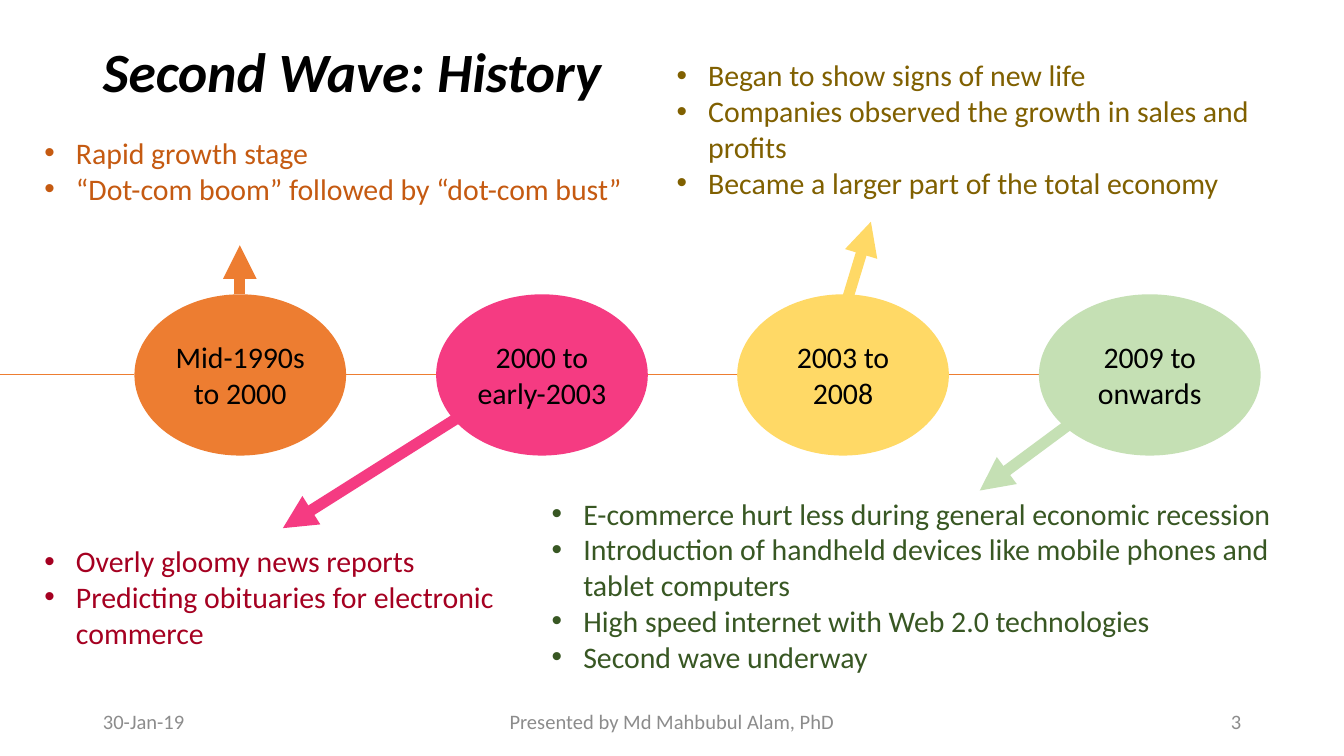
from collections import namedtuple
from dataclasses import dataclass

from pptx import Presentation
from pptx.dml.color import RGBColor
from pptx.enum.shapes import MSO_CONNECTOR as CXN, MSO_SHAPE as SHAPE
from pptx.enum.text import MSO_ANCHOR as ANCHOR, PP_ALIGN as ALIGN
from pptx.oxml.ns import qn
from pptx.util import Pt
from lxml.etree import SubElement

PX = 4572
Box = namedtuple("Box", "x y w h")
Stage = namedtuple("Stage", "label fill width arrow")
Note = namedtuple("Note", "box color items")


@dataclass(frozen=True)
class Theme:
    """Colours, type sizes and line widths of the slide."""
    font: str = "Calibri"
    ink: str = "000000"
    muted: str = "8C8C8C"
    orange: str = "ED7D31"
    pink: str = "F53B82"
    yellow: str = "FFD966"
    green: str = "C5E0B4"
    rust: str = "C55A11"
    crimson: str = "A50021"
    olive: str = "806000"
    forest: str = "385723"
    title: float = 29.7
    body: int = 16
    small: int = 11
    rail: float = 0.5
    arrow: int = 6


T = Theme()

STAGES = [
    Stage("Mid-1990s to 2000", T.orange, 315, (357, 0, 357, -73)),
    Stage("2000 to early-2003", T.pink, 315, (695, 175, 421, 348)),
    Stage("2003 to 2008", T.yellow, 315, (1256, 24, 1296, -108)),
    Stage("2009 to onwards", T.green, 330, (1616, 175, 1458, 292)),
]

NOTES = [
    Note(Box(51, 192, 950, 164), T.rust, [
        "Rapid growth stage",
        "“Dot-com boom” followed by “dot-com bust”"]),
    Note(Box(51, 800, 756, 176), T.crimson, [
        "Overly gloomy news reports",
        "Predicting obituaries for electronic commerce"]),
    Note(Box(992, 77, 932, 230), T.olive, [
        "Began to show signs of new life",
        "Companies observed the growth in sales and profits",
        "Became a larger part of the total economy"]),
    Note(Box(806, 729, 1156, 284), T.forest, [
        "E-commerce hurt less during general economic recession",
        "Introduction of handheld devices like mobile phones and tablet computers",
        "High speed internet with Web 2.0 technologies",
        "Second wave underway"]),
]


def emu(*lengths):
    """Turn px lengths into EMU."""
    return [n * PX for n in lengths]


def set_frame(sp, anchor):
    """Give a shape's text frame its insets, wrapping and anchor."""
    tf = sp.text_frame
    tf.word_wrap = True
    tf.vertical_anchor = anchor
    tf.margin_left, tf.margin_top, tf.margin_right, tf.margin_bottom = emu(15, 8, 15, 8)
    return tf


def add_run(p, text, size, color, strong=False):
    """Add one styled run to a paragraph."""
    r = p.add_run()
    r.text = text
    r.font.name, r.font.size = T.font, Pt(size)
    r.font.color.rgb = RGBColor.from_string(color)
    if strong:
        r.font.bold = r.font.italic = True


def add_label(s, box, text, size, color, align=ALIGN.LEFT, strong=False):
    """Add a one-paragraph text box, centred vertically."""
    tf = set_frame(s.shapes.add_textbox(*emu(*box)), ANCHOR.MIDDLE)
    p = tf.paragraphs[0]
    p.alignment = align
    add_run(p, text, size, color, strong)
    return p


def add_line(s, ends, color, width, arrow=False):
    """Add a straight line, with an optional arrowhead at its end."""
    cx = s.shapes.add_connector(CXN.STRAIGHT, *emu(*ends))
    cx.line.color.rgb = RGBColor.from_string(color)
    cx.line.width = Pt(width)
    if arrow:
        SubElement(cx.line._get_or_add_ln(), qn("a:tailEnd"), type="triangle")
    SubElement(cx._element.spPr, qn("a:effectLst"))


def add_title(s, box):
    """Place the slide title."""
    p = add_label(s, box, "Second Wave: History", T.title, T.ink, strong=True)
    p.line_spacing = 0.9


def add_oval(s, box, stage):
    """Place one stage of the timeline."""
    sp = s.shapes.add_shape(SHAPE.OVAL, *emu(*box))
    sp.shadow.inherit = False
    sp.fill.solid()
    sp.fill.fore_color.rgb = RGBColor.from_string(stage.fill)
    sp.line.fill.background()
    p = set_frame(sp, ANCHOR.MIDDLE).paragraphs[0]
    p.alignment = ALIGN.CENTER
    add_run(p, stage.label, T.body, T.ink)


def add_timeline(s, box):
    """Place the stages, the rail between them and their arrows."""
    first, last = 200, box.w - STAGES[-1].width
    mid, rail_x = box.y + box.h // 2, box.x
    for i, stage in enumerate(STAGES):
        x = box.x + first + round(i * (last - first) / (len(STAGES) - 1))
        add_line(s, (rail_x, mid, x, mid), T.orange, T.rail)
        add_oval(s, Box(x, box.y, stage.width, box.h), stage)
        rail_x = x + stage.width
        x1, y1, x2, y2 = stage.arrow
        ends = (box.x + x1, box.y + y1, box.x + x2, box.y + y2)
        add_line(s, ends, stage.fill, T.arrow, arrow=True)


def add_note(s, box, color, items):
    """Place a bulleted list."""
    tf = set_frame(s.shapes.add_textbox(*emu(*box)), ANCHOR.TOP)
    indent = 47 * PX
    for i, item in enumerate(items):
        p = tf.add_paragraph() if i else tf.paragraphs[0]
        pPr = p._p.get_or_add_pPr()
        pPr.set("marL", str(indent))
        pPr.set("indent", str(-indent))
        SubElement(pPr, qn("a:buFont"), typeface="Arial")
        SubElement(pPr, qn("a:buChar"), char="•")
        add_run(p, item, T.body, color)


def add_footer(s, box):
    """Place the date, presenter and page number."""
    side, centre = 450, 676
    parts = [
        (0, side, "30-Jan-19", ALIGN.LEFT),
        ((box.w - centre) // 2, centre, "Presented by Md Mahbubul Alam, PhD", ALIGN.CENTER),
        (box.w - side, side, "3", ALIGN.RIGHT),
    ]
    for x, w, text, align in parts:
        add_label(s, Box(box.x + x, box.y, w, box.h), text, T.small, T.muted, align)


def main():
    """Build and save the slide."""
    prs = Presentation()
    prs.slide_width, prs.slide_height = emu(2000, 1125)
    s = prs.slides.add_slide(prs.slide_layouts[6])
    add_title(s, Box(138, 60, 854, 102))
    add_timeline(s, Box(0, 438, 1876, 240))
    for note in NOTES:
        add_note(s, *note)
    add_footer(s, Box(138, 1043, 1724, 60))
    prs.save("out.pptx")


if __name__ == "__main__":
    main()
